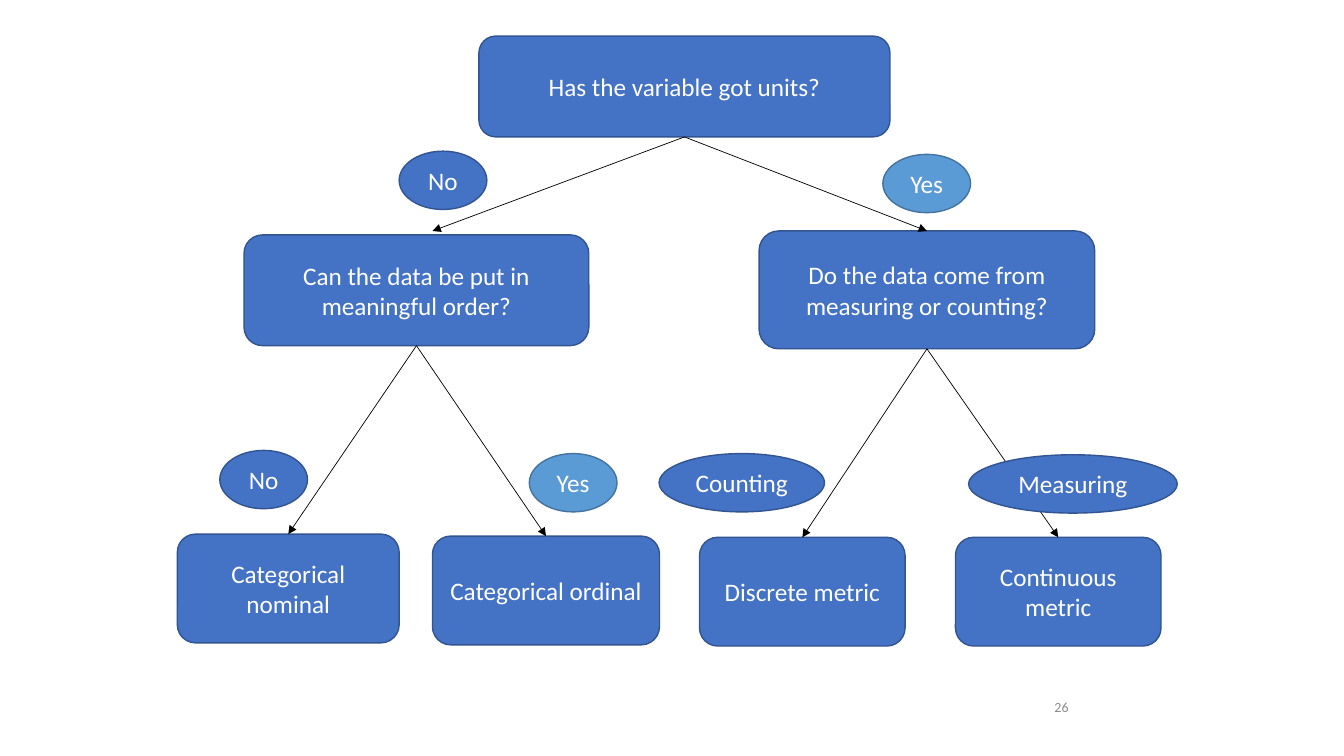
import pptx
import pptx.dml.color
import pptx.enum.shapes
import pptx.enum.text
import pptx.oxml.ns
import pptx.util
from lxml import etree

Cm, Pt = pptx.util.Cm, pptx.util.Pt
RGBColor = pptx.dml.color.RGBColor
SHAPE = pptx.enum.shapes.MSO_SHAPE
ALIGN = pptx.enum.text.PP_ALIGN
qn = pptx.oxml.ns.qn

BLUE = RGBColor(0x44, 0x72, 0xC4)
BLUE_EDGE = RGBColor(0x32, 0x54, 0x91)
LIGHT_BLUE = RGBColor(0x5B, 0x9B, 0xD5)
LIGHT_BLUE_EDGE = RGBColor(0x43, 0x73, 0x9E)
WHITE = RGBColor(0xFF, 0xFF, 0xFF)
BLACK = RGBColor(0, 0, 0)
GREY = RGBColor(0x8C, 0x8C, 0x8C)

TOP, BOTTOM = 0, 2
LEAF_HEIGHT = 2.74
ANSWER_HEIGHT = 1.47
SHORT_ANSWER = 2.21


def write(holder, text, size, color, align):
    frame = holder.text_frame
    frame.word_wrap = True
    frame.vertical_anchor = pptx.enum.text.MSO_ANCHOR.MIDDLE
    frame.text = text
    paragraph = frame.paragraphs[0]
    paragraph.alignment = align
    font = paragraph.runs[0].font
    font.name = "Calibri"
    font.size = Pt(size)
    font.color.rgb = color


def add_node(slide, kind, text, left, top, width, height,
             fill=BLUE, edge=BLUE_EDGE):
    node = slide.shapes.add_shape(kind, Cm(left), Cm(top), Cm(width), Cm(height))
    node.shadow.inherit = False
    node.fill.solid()
    node.fill.fore_color.rgb = fill
    node.line.color.rgb = edge
    node.line.width = Pt(1)
    write(node, text, 18, WHITE, ALIGN.CENTER)
    return node


def add_box(slide, text, left, top, width, height=LEAF_HEIGHT):
    return add_node(slide, SHAPE.ROUNDED_RECTANGLE, text, left, top, width, height)


def add_answer(slide, text, left, top, width=SHORT_ANSWER):
    colors = (LIGHT_BLUE, LIGHT_BLUE_EDGE) if text == "Yes" else (BLUE, BLUE_EDGE)
    add_node(slide, SHAPE.OVAL, text, left, top, width, ANSWER_HEIGHT, *colors)


def add_branch(slide, parent, child=None, end=(0, 0)):
    """Arrow from the foot of parent to the top of child, or to a free end in cm."""
    branch = slide.shapes.add_connector(
        pptx.enum.shapes.MSO_CONNECTOR.STRAIGHT, 0, 0, Cm(end[0]), Cm(end[1]))
    branch.begin_connect(parent, BOTTOM)
    if child is not None:
        branch.end_connect(child, TOP)
    branch.line.color.rgb = BLACK
    branch.line.width = Pt(0.5)
    properties = branch.element.spPr
    etree.SubElement(properties.find(qn("a:ln")), qn("a:tailEnd"), type="triangle")
    etree.SubElement(properties, qn("a:effectLst"))


def add_page_number(slide, number):
    box = slide.shapes.add_textbox(Cm(22.48), Cm(17.42), Cm(4.7), Cm(0.81))
    write(box, number, 10, GREY, ALIGN.RIGHT)


def main():
    deck = pptx.Presentation()
    deck.slide_width, deck.slide_height = Cm(33.87), Cm(19.05)
    slide = deck.slides.add_slide(deck.slide_layouts[6])

    add_page_number(slide, "26")

    units = add_box(slide, "Has the variable got units?", 12.07, 0.91, 10.36, 2.54)
    order = add_box(slide, "Can the data be put in meaningful order?",
                    6.15, 5.92, 8.69, 2.79)
    origin = add_box(slide, "Do the data come from measuring or counting?",
                     19.13, 5.82, 8.46, 2.97)
    nominal = add_box(slide, "Categorical nominal", 4.47, 13.46, 5.59)
    ordinal = add_box(slide, "Categorical ordinal", 10.9, 13.51, 5.72)
    discrete = add_box(slide, "Discrete metric", 17.63, 13.54, 5.18)
    continuous = add_box(slide, "Continuous metric", 24.08, 13.54, 5.18)

    add_branch(slide, units, end=(10.9, 5.82))
    for parent, child in [(units, origin), (order, nominal), (order, ordinal),
                          (origin, discrete), (origin, continuous)]:
        add_branch(slide, parent, child)

    add_answer(slide, "No", 10.06, 3.81)
    add_answer(slide, "Yes", 22.25, 3.89)
    add_answer(slide, "No", 5.54, 11.35)
    add_answer(slide, "Yes", 13.34, 11.43)
    add_answer(slide, "Counting", 16.61, 11.43, 4.17)
    add_answer(slide, "Measuring", 24.41, 11.46, 5.26)

    deck.save("out.pptx")


if __name__ == "__main__":
    main()
